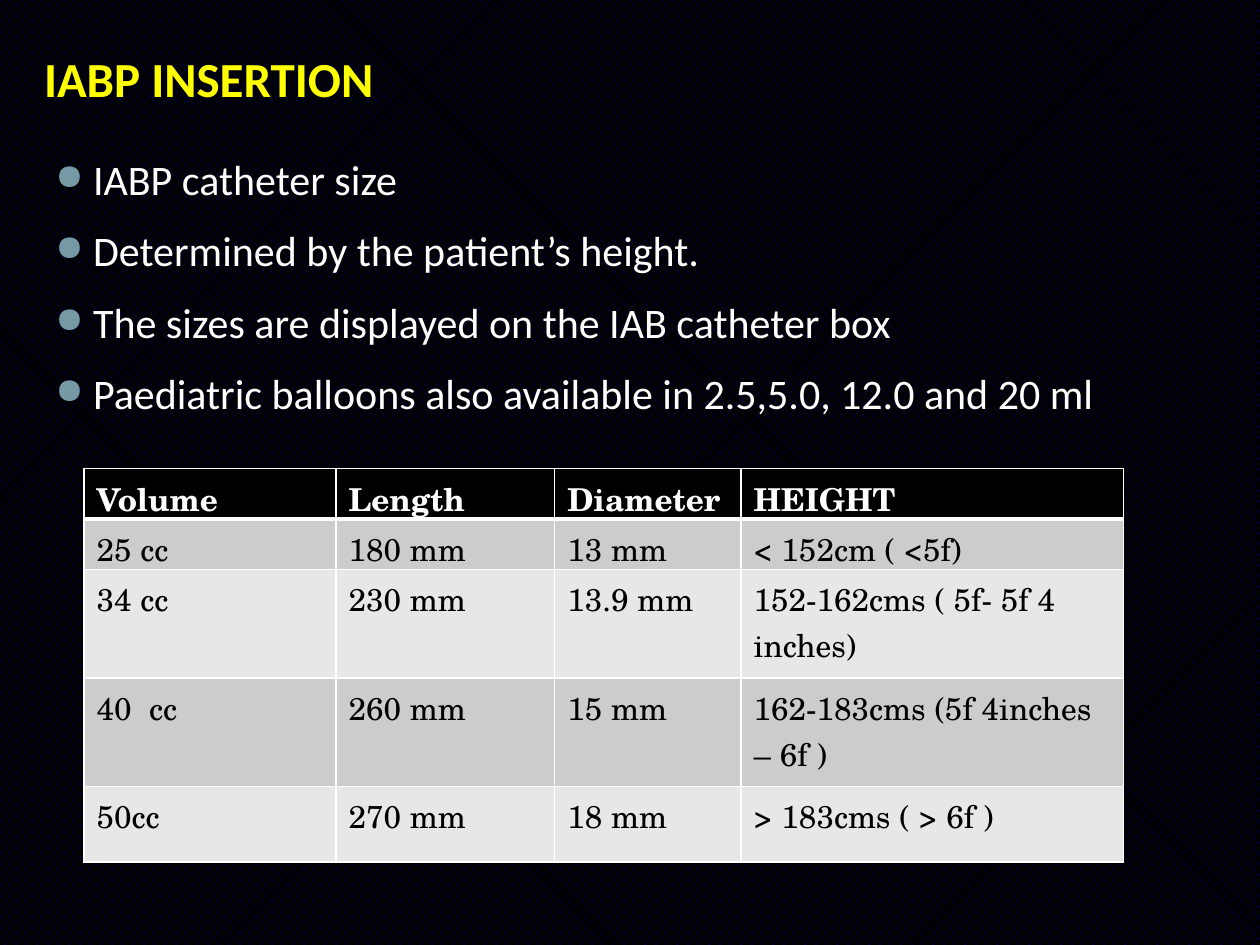
from lxml.etree import SubElement
from pptx import Presentation
from pptx.dml.color import RGBColor
from pptx.enum.dml import MSO_PATTERN
from pptx.enum.text import MSO_ANCHOR, MSO_AUTO_SIZE, PP_ALIGN
from pptx.oxml.ns import qn
from pptx.util import Pt

TITLE = "IABP INSERTION"
BULLETS = [
    "IABP catheter size",
    "Determined by the patient’s height. ",
    "The sizes are displayed on the IAB catheter box",
    "Paediatric balloons also available in 2.5,5.0, 12.0 and 20 ml",
]
SIZES = [
    ("Volume", "Length", "Diameter", "HEIGHT"),
    ("25 cc", "180 mm", "13 mm", "< 152cm ( <5f)"),
    ("34 cc", "230 mm", "13.9 mm", "152-162cms ( 5f- 5f 4 inches)"),
    ("40  cc", "260 mm", "15 mm", "162-183cms (5f 4inches – 6f )"),
    ("50cc", "270 mm", "18 mm", "> 183cms ( > 6f )"),
]
COL_WIDTHS = [144, 125, 106.5, 218.5]
ROW_HEIGHTS = [25.2, 25.2, 62, 62, 43.2]

BLACK = RGBColor(0x00, 0x00, 0x00)
WHITE = RGBColor(0xFF, 0xFF, 0xFF)
NAVY = RGBColor(0x00, 0x00, 0x66)
YELLOW = RGBColor(0xFF, 0xFF, 0x00)
TEAL = RGBColor(0x75, 0x9A, 0xA5)
BANDS = [RGBColor(0xE7, 0xE7, 0xE7), RGBColor(0xCC, 0xCC, 0xCC)]
BODY_FONT = "Calibri"
TABLE_FONT = "TeX Gyre Schola"


def add_run(p, text, font, size, color, bold=False):
    r = p.add_run()
    r.text = text
    r.font.name = font
    r.font.size = Pt(size)
    r.font.bold = bold
    r.font.color.rgb = color


def set_bullet(p, indent):
    pPr = p._p.get_or_add_pPr()
    pPr.set("marL", str(Pt(indent)))
    pPr.set("indent", str(-Pt(indent)))
    color = SubElement(pPr, qn("a:buClr"))
    SubElement(color, qn("a:srgbClr"), val=str(TEAL))
    SubElement(pPr, qn("a:buSzPct"), val="85000")
    SubElement(pPr, qn("a:buChar"), char="●")


def set_borders(cell, **widths):
    """Draw white borders; sides are L, R, T and B, widths in points."""
    tcPr = cell._tc.get_or_add_tcPr()
    for side, width in widths.items():
        ln = SubElement(tcPr, qn(f"a:ln{side}"), w=str(Pt(width)))
        fill = SubElement(ln, qn("a:solidFill"))
        SubElement(fill, qn("a:srgbClr"), val=str(WHITE))


def add_title(s):
    title = s.shapes.title
    title.left, title.top, title.width, title.height = Pt(18), Pt(24), Pt(258), Pt(41)
    tf = title.text_frame
    tf.word_wrap = True
    tf.auto_size = MSO_AUTO_SIZE.NONE
    tf.vertical_anchor = MSO_ANCHOR.TOP
    p = tf.paragraphs[0]
    p.alignment = PP_ALIGN.LEFT
    add_run(p, TITLE, BODY_FONT, 28, YELLOW, bold=True)


def add_bullets(s):
    tf = s.shapes.add_textbox(Pt(24.5), Pt(84.2), Pt(635), Pt(159)).text_frame
    tf.word_wrap = True
    for i, text in enumerate(BULLETS):
        p = tf.add_paragraph() if i else tf.paragraphs[0]
        p.alignment = PP_ALIGN.JUSTIFY
        p.space_before = p.space_after = Pt(6)
        set_bullet(p, 21.6)
        add_run(p, text, BODY_FONT, 24, WHITE)


def add_size_table(s):
    table = s.shapes.add_table(
        len(SIZES), len(COL_WIDTHS), Pt(48), Pt(267.8),
        Pt(sum(COL_WIDTHS)), Pt(sum(ROW_HEIGHTS))).table
    for col, width in zip(table.columns, COL_WIDTHS):
        col.width = Pt(width)
    for i, (row, height, texts) in enumerate(zip(table.rows, ROW_HEIGHTS, SIZES)):
        row.height = Pt(height)
        header = i == 0
        for cell, text in zip(row.cells, texts):
            set_borders(cell, L=1, R=1, T=3 if i == 1 else 1, B=3 if header else 1)
            cell.fill.solid()
            cell.fill.fore_color.rgb = BLACK if header else BANDS[i % 2]
            add_run(cell.text_frame.paragraphs[0], text, TABLE_FONT, 18,
                    WHITE if header else BLACK, bold=header)


def main():
    prs = Presentation()
    prs.slide_width, prs.slide_height = Pt(720), Pt(540)
    s = prs.slides.add_slide(prs.slide_layouts[5])
    fill = s.background.fill
    fill.patterned()
    fill.pattern = MSO_PATTERN.from_xml("pct40")
    fill.fore_color.rgb = NAVY
    fill.back_color.rgb = BLACK
    add_title(s)
    add_bullets(s)
    add_size_table(s)
    prs.save("out.pptx")


if __name__ == "__main__":
    main()
